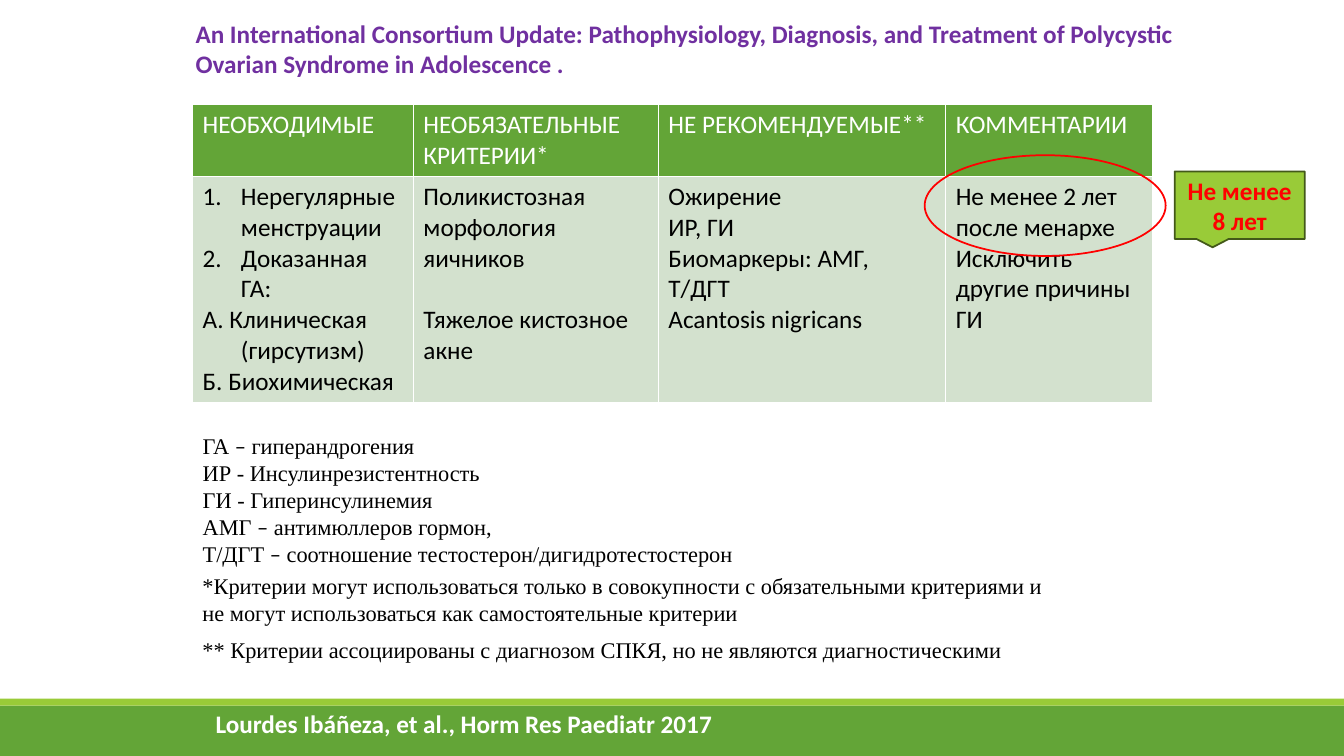
from lxml.etree import SubElement
from pptx import Presentation
from pptx.dml.color import RGBColor
from pptx.enum.shapes import MSO_SHAPE
from pptx.enum.text import MSO_ANCHOR, MSO_AUTO_SIZE, PP_ALIGN
from pptx.oxml import parse_xml
from pptx.oxml.ns import nsdecls, qn
from pptx.util import Inches, Pt

GREEN = RGBColor(0x63, 0xA5, 0x37)
LIME = RGBColor(0x99, 0xCB, 0x38)
DARK_GREEN = RGBColor(0x43, 0x59, 0x19)
PALE = RGBColor(0xD3, 0xE1, 0xCE)
PURPLE = RGBColor(0x70, 0x30, 0xA0)
RED = RGBColor(0xFF, 0x00, 0x00)
WHITE = RGBColor(0xFF, 0xFF, 0xFF)
BLACK = RGBColor(0x00, 0x00, 0x00)
SANS, SERIF = "Calibri", "Times New Roman"

HEADINGS = ["НЕОБХОДИМЫЕ", "НЕОБЯЗАТЕЛЬНЫЕ КРИТЕРИИ*", "НЕ РЕКОМЕНДУЕМЫЕ**", "КОММЕНТАРИИ"]
CRITERIA = [
    (["Нерегулярные менструации", "Доказанная ГА:", "А. Клиническая (гирсутизм)",
      "Б. Биохимическая"], {"numbered": 2, "hanging": 0.38}),
    (["Поликистозная морфология яичников", "Тяжелое кистозное акне"], {"gap": 22}),
    (["Ожирение", "ИР, ГИ", "Биомаркеры: АМГ,\vТ/ДГТ", "Acantosis nigricans"], {}),
    (["Не менее 2 лет после менархе", "Исключить другие причины ГИ"], {}),
]
GLOSSARY = ["ГА – гиперандрогения", "ИР - Инсулинрезистентность", "ГИ - Гиперинсулинемия",
            "АМГ – антимюллеров гормон,", "Т/ДГТ – соотношение тестостерон/дигидротестостерон"]
NOTES = [
    ("*Критерии могут использоваться только в совокупности с обязательными критериями "
     "и не могут использоваться как самостоятельные критерии", (14.33, 71.33, 64.8, 12.13)),
    ("** Критерии ассоциированы с диагнозом СПКЯ, но не являются диагностическими",
     (14.33, 79.87, 61.8, 8.53)),
]


def write(frame, lines, size=18, font=SANS, color=BLACK, bold=False, align=PP_ALIGN.LEFT,
          anchor=MSO_ANCHOR.TOP, leading=None, gap=0, numbered=0, hanging=0):
    frame.word_wrap = True
    frame.vertical_anchor = anchor
    for index, line in enumerate(lines):
        para = frame.add_paragraph() if index else frame.paragraphs[0]
        para.alignment = align
        para.space_before = Pt(gap if index else 0)
        if leading:
            para.line_spacing = Pt(leading)
        properties = para._p.get_or_add_pPr()
        properties.set("marL", str(Inches(hanging)))
        properties.set("indent", str(-Inches(hanging)))
        if index < numbered:
            SubElement(properties, qn("a:buAutoNum"), type="arabicPeriod")
        else:
            SubElement(properties, qn("a:buNone"))
        for number, part in enumerate(line.split("\v")):
            if number:
                para.add_line_break()
            for piece in filter(None, part.partition("–")):
                span = para.add_run()
                span.text = piece
                span.font.name = SANS if piece == "–" else font
                span.font.size = Pt(size)
                span.font.bold = bold
                span.font.color.rgb = color


class SlideBuilder:
    """Builds slide elements on a grid of 100 columns by 100 rows."""

    def __init__(self, deck):
        self.column = deck.slide_width / 100
        self.row = deck.slide_height / 100
        self.page = deck.slides.add_slide(deck.slide_layouts[1])

    def place(self, left, top, width, height):
        return (round(left * self.column), round(top * self.row),
                round(width * self.column), round(height * self.row))

    def placeholder(self, index, area, lines, **style):
        box = self.page.placeholders[index]
        box.left, box.top, box.width, box.height = self.place(*area)
        box.text_frame.auto_size = MSO_AUTO_SIZE.NONE
        write(box.text_frame, lines, **style)

    def text(self, area, lines, **style):
        box = self.page.shapes.add_textbox(*self.place(*area))
        write(box.text_frame, lines, **style)

    def shape(self, kind, area, fill=None, line=None):
        shape = self.page.shapes.add_shape(kind, *self.place(*area))
        shape.shadow.inherit = False
        if fill is None:
            shape.fill.background()
        else:
            shape.fill.solid()
            shape.fill.fore_color.rgb = fill
        if line is None:
            shape.line.fill.background()
        else:
            shape.line.color.rgb = line
            shape.line.width = Pt(1.25)
        return shape

    def table(self, left, top, widths, heights):
        area = self.place(left, top, sum(widths), sum(heights))
        table = self.page.shapes.add_table(len(heights), len(widths), *area).table
        table.horz_banding = False
        for column, width in zip(table.columns, widths):
            column.width = round(width * self.column)
        for row, height in zip(table.rows, heights):
            row.height = round(height * self.row)
        return table

    def cell(self, cell, fill, lines, **style):
        cell.fill.solid()
        cell.fill.fore_color.rgb = fill
        for index, side in enumerate("LRTB"):
            border = parse_xml(f'<a:ln{side} {nsdecls("a")} w="{Pt(1)}"><a:solidFill>'
                               f'<a:srgbClr val="{WHITE}"/></a:solidFill></a:ln{side}>')
            cell._tc.get_or_add_tcPr().insert(index, border)
        write(cell.text_frame, lines, **style)


def main():
    deck = Presentation()
    deck.slide_width, deck.slide_height = Inches(13.33), Inches(7.5)
    slide = SlideBuilder(deck)

    slide.shape(MSO_SHAPE.RECTANGLE, (0, 93.33, 100, 6.67), fill=GREEN)
    slide.shape(MSO_SHAPE.RECTANGLE, (0, 92.4, 100, 0.93), fill=LIME)
    slide.placeholder(0, (13.8, 1.73, 75, 9.47), [
        "An International Consortium Update: Pathophysiology, Diagnosis, and Treatment "
        "of Polycystic Ovarian Syndrome in Adolescence ."], color=PURPLE, bold=True)

    criteria = slide.table(14.33, 13.87, [16.43, 18.23, 21.38, 15.38], [9.33, 29.87])
    for index, (heading, (lines, style)) in enumerate(zip(HEADINGS, CRITERIA)):
        slide.cell(criteria.cell(0, index), GREEN, [heading], color=WHITE)
        slide.cell(criteria.cell(1, index), PALE, lines, **style)

    serif = {"size": 16, "font": SERIF, "leading": 19.3}
    slide.placeholder(1, (14.33, 56.4, 41.55, 19.33), GLOSSARY,
                      anchor=MSO_ANCHOR.MIDDLE, **serif)
    for note, area in NOTES:
        slide.text(area, [note], anchor=MSO_ANCHOR.BOTTOM, **serif)
    slide.text((15.3, 93.07, 50, 5.33), ["Lourdes Ibáñeza, et al., Horm Res Paediatr 2017"],
               color=WHITE, bold=True)

    slide.shape(MSO_SHAPE.OVAL, (68.8, 20.53, 17.93, 13.33), line=RED)
    callout = slide.shape(MSO_SHAPE.RECTANGULAR_CALLOUT, (87.4, 22.67, 9.68, 8.93),
                          fill=LIME, line=DARK_GREEN)
    write(callout.text_frame, ["Не менее 8 лет"], color=RED, bold=True,
          align=PP_ALIGN.CENTER, anchor=MSO_ANCHOR.MIDDLE)
    deck.save("out.pptx")


if __name__ == "__main__":
    main()
